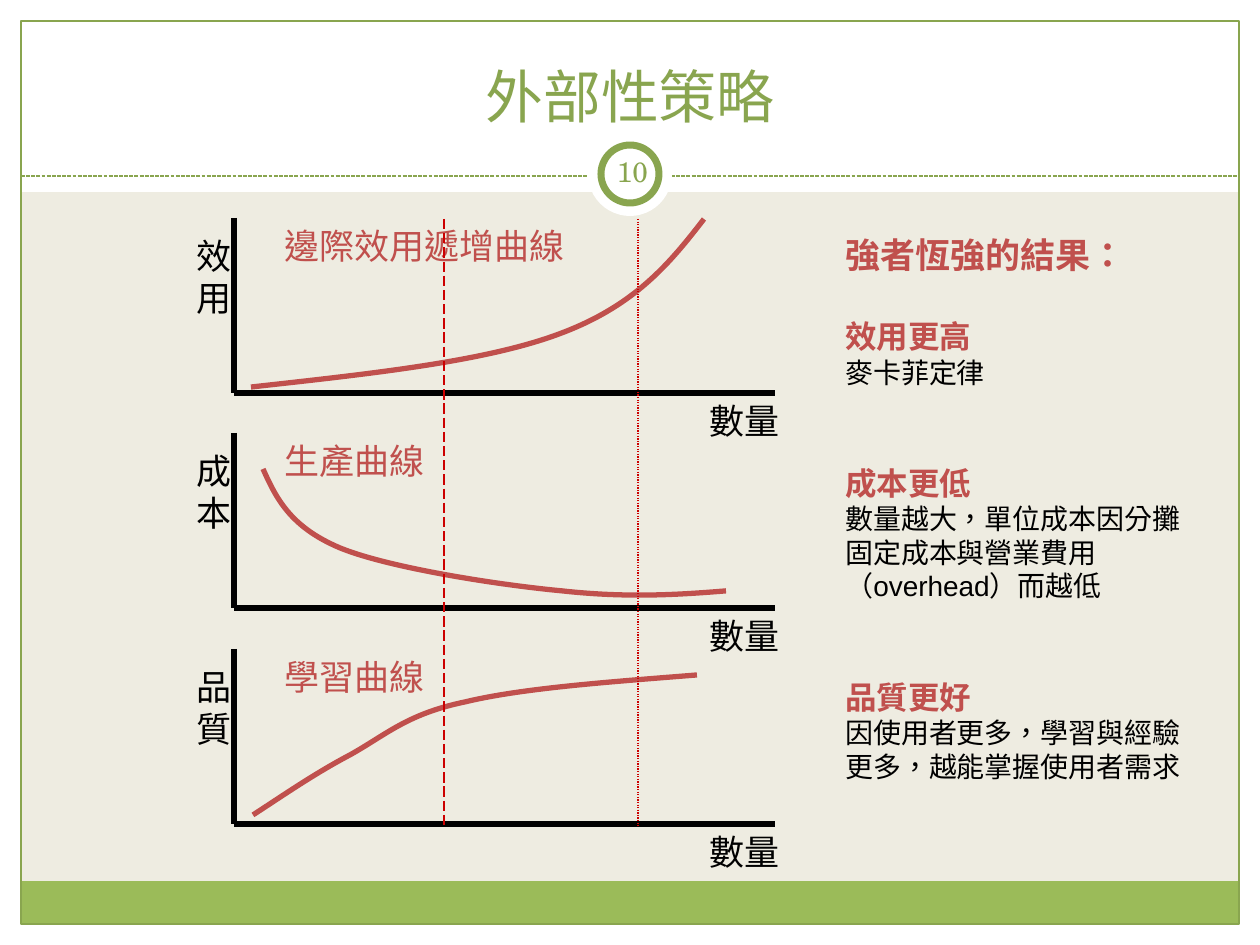
"""Build the externality strategy slide with its three curves."""
from dataclasses import dataclass

from pptx import Presentation
from pptx.dml.color import RGBColor
from pptx.enum.dml import MSO_LINE
from pptx.enum.shapes import MSO_CONNECTOR, MSO_SHAPE
from pptx.enum.text import MSO_ANCHOR, MSO_AUTO_SIZE, PP_ALIGN
from pptx.oxml.ns import qn
from pptx.oxml.xmlchemy import OxmlElement
from pptx.util import Emu, Pt

EMU_PER_PX = 914400 / 126
WIDTH, HEIGHT, MARGIN = 1260, 945, 21


@dataclass(frozen=True)
class Theme:
    """Colours, fonts and type sizes of the slide."""
    paper: str = "EEECE1"
    white: str = "FFFFFF"
    black: str = "000000"
    green: str = "89A54F"
    band: str = "9BBB59"
    red: str = "C0504D"
    marker: str = "CC0000"
    serif: str = "TeX Gyre Schola"
    sans: str = "Arial"
    language: str = "zh-TW"
    title: int = 33
    label: int = 20
    heading: int = 18
    body: int = 16
    thin: float = 0.75
    thick: int = 3
    ring: int = 4


THEME = Theme()

CHARTS = [
    (218, "效用", "邊際效用遞增曲線", 306,
     [(251, 387), (368, 374), (484, 362), (559, 334),
      (635, 306), (670, 263), (704, 219)]),
    (433, "成本", "生產曲線", 166,
     [(263, 469), (276, 498), (290, 527), (340, 548), (389, 568),
      (498, 585), (562, 591), (626, 598), (677, 595), (726, 591)]),
    (649, "品質", "學習曲線", 166,
     [(253, 815), (284, 795), (314, 774), (350, 755), (386, 735),
      (407, 714), (465, 702), (523, 688), (610, 682), (697, 675)]),
]

RESULTS = [
    (24, "效用更高", "麥卡菲定律"),
    (43, "成本更低", "數量越大，單位成本因分攤固定成本與營業費用（overhead）而越低"),
    (43, "品質更好", "因使用者更多，學習與經驗更多，越能掌握使用者需求"),
]


def px(length):
    """Turn pixels into EMU."""
    return Emu(round(length * EMU_PER_PX))


def rgb(colour):
    """Turn a hex string into a colour."""
    return RGBColor.from_string(colour)


def style_line(line, colour, width, dash=None):
    """Set the colour, width and dash of a line."""
    line.color.rgb = rgb(colour)
    line.width = Pt(width)
    if dash is not None:
        line.dash_style = dash


def add_panel(shapes, preset, box, fill=None, line=None, width=THEME.thin):
    """Add a flat preset shape."""
    panel = shapes.add_shape(preset, *map(px, box))
    panel.shadow.inherit = False
    if fill:
        panel.fill.solid()
        panel.fill.fore_color.rgb = rgb(fill)
    else:
        panel.fill.background()
    if line:
        style_line(panel.line, line, width)
    else:
        panel.line.fill.background()


def add_rule(shapes, start, end, colour, width, dash=None):
    """Add a straight line without shadow."""
    rule = shapes.add_connector(
        MSO_CONNECTOR.STRAIGHT, *map(px, (*start, *end)))
    style_line(rule.line, colour, width, dash)
    rule._element.spPr.append(OxmlElement("a:effectLst"))


def add_curve(shapes, points):
    """Add a smooth curve through a start point and Bezier triples."""
    builder = shapes.build_freeform(*points[0], scale=EMU_PER_PX)
    builder.add_line_segments(points[1:], close=False)
    curve = builder.convert_to_shape()
    curve.shadow.inherit = False
    curve.fill.background()
    style_line(curve.line, THEME.red, THEME.thick)
    segments = list(curve._element.iter(qn("a:lnTo")))
    for first in range(0, len(segments), 3):
        bezier = OxmlElement("a:cubicBezTo")
        segments[first].addprevious(bezier)
        for segment in segments[first:first + 3]:
            bezier.append(segment[0])
            segment.getparent().remove(segment)


def write(paragraph, text, size, colour, font=THEME.serif, bold=False):
    """Fill a paragraph with text in one style and language."""
    run = paragraph.add_run()
    run.text = text
    run._r.get_or_add_rPr().set("lang", THEME.language)
    paragraph.font.size = Pt(size)
    paragraph.font.name = font
    paragraph.font.bold = bold
    paragraph.font.color.rgb = rgb(colour)


def add_text(shapes, box, lines, size, colour, wrap=False,
             align=PP_ALIGN.LEFT, anchor=MSO_ANCHOR.TOP, inset=None):
    """Add a text box with one paragraph for each line."""
    frame = shapes.add_textbox(*map(px, box)).text_frame
    frame.word_wrap = wrap
    if not wrap:
        frame.auto_size = MSO_AUTO_SIZE.SHAPE_TO_FIT_TEXT
    frame.vertical_anchor = anchor
    if inset is not None:
        frame.margin_left = frame.margin_right = px(inset)
    for number, text in enumerate(lines):
        paragraph = frame.add_paragraph() if number else frame.paragraphs[0]
        write(paragraph, text, size, colour)
        paragraph.alignment = align
    return frame


def add_background(shapes):
    """Add the margins, frame, footer band and page ring."""
    inner_width, inner_height = WIDTH - 2 * MARGIN, HEIGHT - 2 * MARGIN
    margins = [(0, HEIGHT - MARGIN, WIDTH, MARGIN), (0, 0, WIDTH, 192),
               (0, 0, MARGIN, HEIGHT), (WIDTH - MARGIN, 0, MARGIN, HEIGHT)]
    for margin in margins:
        add_panel(shapes, MSO_SHAPE.RECTANGLE, margin, THEME.white)
    add_panel(shapes, MSO_SHAPE.RECTANGLE,
              (MARGIN, 881, inner_width, 43), THEME.band)
    add_panel(shapes, MSO_SHAPE.RECTANGLE,
              (MARGIN, MARGIN, inner_width, inner_height), line=THEME.green)
    add_rule(shapes, (MARGIN, 176), (WIDTH - MARGIN, 176),
             THEME.green, THEME.thin, MSO_LINE.SQUARE_DOT)
    add_panel(shapes, MSO_SHAPE.OVAL, (588, 132, 84, 84), THEME.white)
    add_panel(shapes, MSO_SHAPE.OVAL, (601, 145, 58, 58),
              THEME.white, THEME.green, THEME.ring)


def add_curve_chart(shapes, top, axis_label, name, name_width, points):
    """Add a group with two axes, their labels and a curve."""
    parts = shapes.add_group_shape().shapes
    left, right, base = 234, 775, top + 175
    add_rule(parts, (left, top), (left, base), THEME.black, THEME.thick)
    add_rule(parts, (left, base), (right, base), THEME.black, THEME.thick)
    add_text(parts, (697, base, 96, 54), ["數量"], THEME.label, THEME.black)
    add_text(parts, (272, top, name_width, 54), [name],
             THEME.label, THEME.red)
    add_text(parts, (184, top + 10, 60, 97), axis_label,
             THEME.label, THEME.black)
    add_curve(parts, points)


def add_results(shapes):
    """Add the column of results."""
    frame = add_text(shapes, (833, 227, 382, 563), ["強者恆強的結果："],
                     THEME.label, THEME.red, wrap=True)
    frame.paragraphs[0].font.bold = True
    for gap, heading, detail in RESULTS:
        paragraph = frame.add_paragraph()
        write(paragraph, heading, THEME.heading, THEME.red, bold=True)
        paragraph.space_before = Pt(gap)
        write(frame.add_paragraph(), detail, THEME.body, THEME.black,
              THEME.sans)


def main():
    """Build and save the slide."""
    deck = Presentation()
    deck.slide_width, deck.slide_height = px(WIDTH), px(HEIGHT)
    slide = deck.slides.add_slide(deck.slide_layouts[6])
    slide.background.fill.solid()
    slide.background.fill.fore_color.rgb = rgb(THEME.paper)
    shapes = slide.shapes
    add_background(shapes)
    add_text(shapes, (42, 32, 1176, 104), ["外部性策略"], THEME.title,
             THEME.green, True, PP_ALIGN.CENTER, MSO_ANCHOR.BOTTOM)
    add_text(shapes, (601, 141, 63, 60), ["10"], THEME.body,
             THEME.green, True, PP_ALIGN.CENTER, MSO_ANCHOR.MIDDLE, 6)
    for chart in CHARTS:
        add_curve_chart(shapes, *chart)
    for x, dash in [(638, MSO_LINE.ROUND_DOT), (444, MSO_LINE.LONG_DASH)]:
        add_rule(shapes, (x, 219), (x, 827), THEME.marker, THEME.thin, dash)
    add_results(shapes)
    deck.save("out.pptx")


if __name__ == "__main__":
    main()
